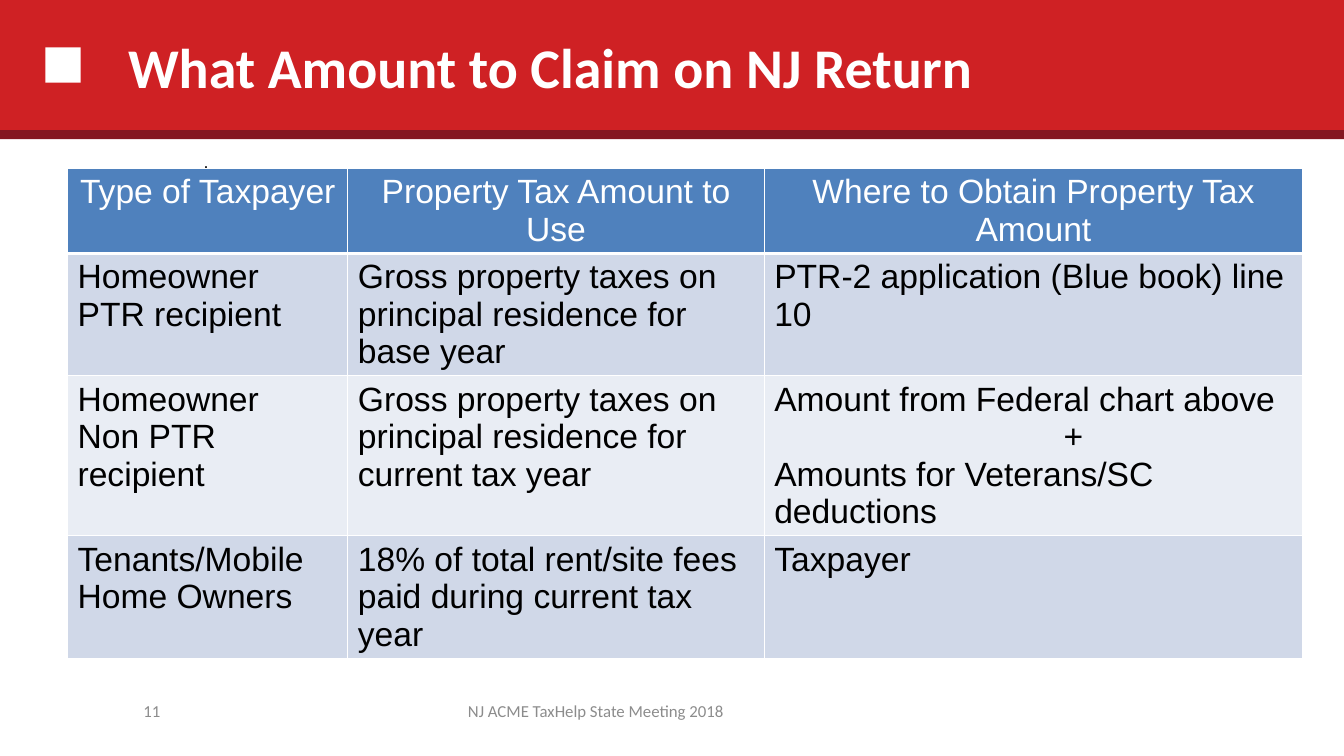
"""Build the slide on property tax amounts for the NJ return."""
from dataclasses import dataclass

import pptx
import pptx.dml.color
import pptx.enum.shapes
import pptx.enum.text
import pptx.oxml
import pptx.oxml.ns
import pptx.util

Inches = pptx.util.Inches
ALIGN = pptx.enum.text.PP_ALIGN
ANCHOR = pptx.enum.text.MSO_ANCHOR

COLORS = {
    "band": "CF2124", "stripe": "841721", "white": "FFFFFF", "black": "000000",
    "footer": "8C8C8C", "header": "4F81BD", "odd": "D0D8E8", "even": "E9EDF4",
}


@dataclass(frozen=True)
class Bar:
    """A plain filled rectangle."""
    left: float
    top: float
    width: float
    height: float
    color: str


@dataclass(frozen=True)
class Label:
    """A one-line text box."""
    text: str
    left: float
    top: float
    width: float
    height: float
    size: float
    color: str
    align: ALIGN
    anchor: ANCHOR


BARS = [
    Bar(0, -0.01, 13.33, 1.33, "band"),
    Bar(0.45, 0.47, 0.35, 0.35, "white"),
    Bar(0, 1.29, 13.33, 0.09, "stripe"),
]
LABELS = [
    Label("NJ ACME TaxHelp State Meeting 2018", 3.8, 6.85, 4.22, 0.4, 12, "footer",
          ALIGN.CENTER, ANCHOR.MIDDLE),
    Label("11", 0.67, 6.85, 1.02, 0.4, 12, "footer", ALIGN.RIGHT, ANCHOR.MIDDLE),
    Label("*", 1.85, 1.49, 10.22, 4.97, 28, "black", ALIGN.LEFT, ANCHOR.TOP),
]
COLUMN_WIDTHS = [2.78, 4.13, 5.34]
ROW_HEIGHTS = [0.84, 1.21, 1.58, 1.21]
ROWS = [
    ["Type of Taxpayer", "Property Tax Amount to Use", "Where to Obtain Property Tax Amount"],
    ["Homeowner\nPTR recipient", "Gross property taxes on principal residence for base year",
     "PTR-2 application (Blue book) line 10"],
    ["Homeowner\nNon PTR recipient",
     "Gross property taxes on principal residence for current tax year",
     "Amount from Federal chart above\n+\nAmounts for Veterans/SC deductions"],
    ["Tenants/Mobile Home Owners", "18% of total rent/site fees paid during current tax year",
     "Taxpayer"],
]
PLUS_INDENT = 2.87


def rgb(name: str) -> pptx.dml.color.RGBColor:
    """Return the named colour."""
    return pptx.dml.color.RGBColor.from_string(COLORS[name])


def style(paragraph, font: str, size: float, color: str, align: ALIGN) -> None:
    """Set the font and alignment of a paragraph."""
    paragraph.alignment = align
    paragraph.font.name = font
    paragraph.font.size = pptx.util.Pt(size)
    paragraph.font.color.rgb = rgb(color)


def draw_bar(slide, bar: Bar) -> None:
    """Draw a filled rectangle without outline."""
    shape = slide.shapes.add_shape(
        pptx.enum.shapes.MSO_SHAPE.RECTANGLE,
        Inches(bar.left), Inches(bar.top), Inches(bar.width), Inches(bar.height))
    shape.shadow.inherit = False
    shape.fill.solid()
    shape.fill.fore_color.rgb = rgb(bar.color)
    shape.line.fill.background()


def draw_label(slide, label: Label) -> None:
    """Draw a text box."""
    shape = slide.shapes.add_textbox(
        Inches(label.left), Inches(label.top), Inches(label.width), Inches(label.height))
    frame = shape.text_frame
    frame.word_wrap = True
    frame.vertical_anchor = label.anchor
    frame.text = label.text
    style(frame.paragraphs[0], "Calibri", label.size, label.color, label.align)


def draw_title(slide, text: str) -> None:
    """Place the title placeholder in front of the band."""
    title = slide.shapes.title
    title.left, title.top = Inches(1.17), Inches(0.03)
    title.width, title.height = Inches(10.66), Inches(1.25)
    title.text_frame.text = text
    title.text_frame.vertical_anchor = ANCHOR.MIDDLE
    paragraph = title.text_frame.paragraphs[0]
    style(paragraph, "Calibri", 40, "white", ALIGN.LEFT)
    paragraph.font.bold = True
    title.element.getparent().append(title.element)


def add_borders(cell, top: float, bottom: float) -> None:
    """Give a cell white borders, with top and bottom widths in points."""
    properties = cell._tc.get_or_add_tcPr()
    for side, width in (("L", 1), ("R", 1), ("T", top), ("B", bottom)):
        properties.append(pptx.oxml.parse_xml(
            f'<a:ln{side} {pptx.oxml.ns.nsdecls("a")} w="{pptx.util.Pt(width)}"><a:solidFill>'
            f'<a:srgbClr val="{COLORS["white"]}"/></a:solidFill></a:ln{side}>'))


def fill_cell(cell, text: str, row: int) -> None:
    """Write and format one table cell."""
    is_header = row == 0
    add_borders(cell, 3 if row == 1 else 1, 3 if is_header else 1)
    cell.fill.solid()
    cell.fill.fore_color.rgb = rgb("header" if is_header else "odd" if row % 2 else "even")
    cell.text_frame.text = text
    for paragraph in cell.text_frame.paragraphs:
        style(paragraph, "Arial", 24, "white" if is_header else "black",
              ALIGN.CENTER if is_header else ALIGN.LEFT)
        if paragraph.text == "+":
            paragraph._p.get_or_add_pPr().set("marL", str(Inches(PLUS_INDENT)))


def draw_table(slide) -> None:
    """Draw the table of taxpayer types."""
    table = slide.shapes.add_table(
        len(ROWS), len(COLUMN_WIDTHS), Inches(0.67), Inches(1.67),
        Inches(sum(COLUMN_WIDTHS)), Inches(sum(ROW_HEIGHTS))).table
    table.first_row = table.horz_banding = False
    for column, width in zip(table.columns, COLUMN_WIDTHS):
        column.width = Inches(width)
    for row_index, (height, texts) in enumerate(zip(ROW_HEIGHTS, ROWS)):
        table.rows[row_index].height = Inches(height)
        for column_index, text in enumerate(texts):
            fill_cell(table.cell(row_index, column_index), text, row_index)


def main() -> None:
    """Build and save the presentation."""
    presentation = pptx.Presentation()
    presentation.slide_width, presentation.slide_height = Inches(13.33), Inches(7.5)
    slide = presentation.slides.add_slide(presentation.slide_layouts.get_by_name("Title Only"))
    for bar in BARS:
        draw_bar(slide, bar)
    for label in LABELS:
        draw_label(slide, label)
    draw_title(slide, "What Amount to Claim on NJ Return")
    draw_table(slide)
    presentation.save("out.pptx")


if __name__ == "__main__":
    main()
